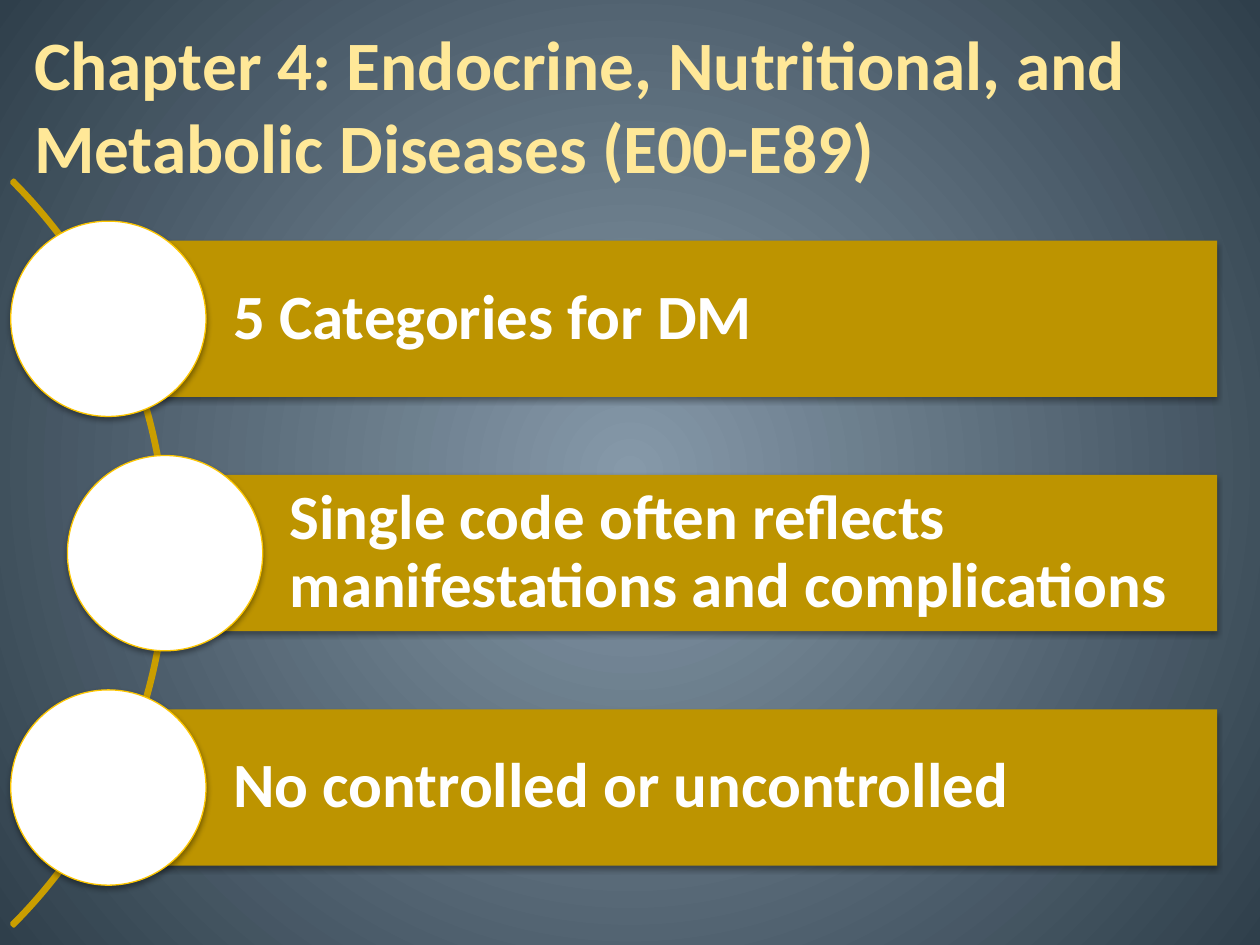
from dataclasses import dataclass

from lxml.etree import SubElement
from pptx import Presentation
from pptx.dml.color import RGBColor
from pptx.enum.shapes import MSO_SHAPE
from pptx.enum.text import MSO_ANCHOR, MSO_AUTO_SIZE, PP_ALIGN
from pptx.oxml.ns import qn
from pptx.shapes.autoshape import Shape
from pptx.slide import Slide
from pptx.text.text import TextFrame
from pptx.util import Inches, Length, Pt

COLORS = {
    "center": "8699A9", "edge": "2F3F4B", "title": "FFE898", "bar": "BD9400",
    "arc": "CA9E00", "rim": "FCC500", "white": "FFFFFF", "shadow": "000000",
}
FONT = "Calibri"

# Grid: 100 columns by 75 rows of square cells
COLUMNS, ROWS = 100, 75
CELL = Inches(0.1)
BAR_RIGHT, BAR_HEIGHT = 96.6, 12.4
CIRCLE_SIZE = 15.5
MIDDLE_ROW, PITCH = 43.9, 18.6
ARC_CENTER, ARC_SIZE = -28.5, 83.7


@dataclass(frozen=True)
class Item:
    text: str
    center_column: float


ITEMS = [
    Item("5 Categories for DM", 8.6),
    Item("Single code often reflects manifestations and complications", 13.1),
    Item("No controlled or uncontrolled", 8.6),
]


def cells(count: float) -> Length:
    return Length(round(count * CELL))


def color(name: str) -> RGBColor:
    return RGBColor.from_string(COLORS[name])


def write(frame: TextFrame, text: str, *, size: float, ink: str,
          spacing: float = 1.0, left_inset: float = 1.0, inset: float = 0.5) -> None:
    frame.word_wrap = True
    frame.auto_size = MSO_AUTO_SIZE.NONE
    frame.vertical_anchor = MSO_ANCHOR.MIDDLE
    frame.margin_left = cells(left_inset)
    frame.margin_right = cells(1)
    frame.margin_top = frame.margin_bottom = cells(inset)
    para = frame.paragraphs[0]
    para.alignment = PP_ALIGN.LEFT
    para.line_spacing = spacing
    span = para.add_run()
    span.text = text
    span.font.name, span.font.size, span.font.bold = FONT, Pt(size), True
    span.font.color.rgb = color(ink)


def add_box(page: Slide, kind: MSO_SHAPE, left: float, top: float, width: float,
            height: float, *, fill: str | None = None, line: str | None = None,
            weight: float = 0.75, shadow: bool = False) -> Shape:
    box = page.shapes.add_shape(kind, cells(left), cells(top), cells(width), cells(height))
    if fill:
        box.fill.solid()
        box.fill.fore_color.rgb = color(fill)
    else:
        box.fill.background()
    if line:
        box.line.color.rgb = color(line)
        box.line.width = Pt(weight)
    else:
        box.line.fill.background()
    box.shadow.inherit = False
    if shadow:
        effects = box._element.spPr.find(qn("a:effectLst"))
        outer = SubElement(effects, qn("a:outerShdw"), blurRad=str(Pt(3.1)),
                           dist=str(Pt(1.8)), dir="5400000", rotWithShape="0")
        tint = SubElement(outer, qn("a:srgbClr"), val=COLORS["shadow"])
        SubElement(tint, qn("a:alpha"), val="35000")
    return box


def paint_background(page: Slide) -> None:
    fill = page.background.fill
    fill.gradient()
    for stop, name in zip(fill.gradient_stops, ("center", "edge")):
        stop.color.rgb = color(name)
    gradient = page._element.find(".//" + qn("a:gradFill"))
    gradient.remove(gradient.find(qn("a:lin")))
    circle = SubElement(gradient, qn("a:path"))
    circle.set("path", "circle")
    SubElement(circle, qn("a:fillToRect"), l="50000", t="50000", r="50000", b="50000")


def add_arc(page: Slide) -> None:
    half = ARC_SIZE / 2
    arc = add_box(page, MSO_SHAPE.BLOCK_ARC, ARC_CENTER - half, MIDDLE_ROW - half,
                  ARC_SIZE, ARC_SIZE, line="arc", weight=2)
    for index, value in enumerate((189, 27, 0.003)):
        arc.adjustments[index] = value


def add_item(page: Slide, item: Item, center_row: float) -> None:
    bar = add_box(page, MSO_SHAPE.RECTANGLE, item.center_column,
                  center_row - BAR_HEIGHT / 2, BAR_RIGHT - item.center_column,
                  BAR_HEIGHT, fill="bar", shadow=True)
    write(bar.text_frame, item.text, size=36, ink="white", spacing=0.9,
          left_inset=9.9, inset=1)
    half = CIRCLE_SIZE / 2
    add_box(page, MSO_SHAPE.OVAL, item.center_column - half, center_row - half,
            CIRCLE_SIZE, CIRCLE_SIZE, fill="white", line="rim", shadow=True)


def main() -> None:
    deck = Presentation()
    deck.slide_width, deck.slide_height = cells(COLUMNS), cells(ROWS)
    page = deck.slides.add_slide(deck.slide_layouts[5])
    paint_background(page)

    # Title
    title = page.shapes.title
    title.left, title.top = cells(1.7), cells(2)
    title.width, title.height = cells(90), cells(12.5)
    write(title.text_frame, "Chapter 4: Endocrine, Nutritional, and Metabolic Diseases (E00-E89)",
          size=39.6, ink="title")

    # Curved list, centred on the middle row
    add_arc(page)
    for index, item in enumerate(ITEMS):
        add_item(page, item, MIDDLE_ROW + (index - 1) * PITCH)

    deck.save("out.pptx")


if __name__ == "__main__":
    main()
